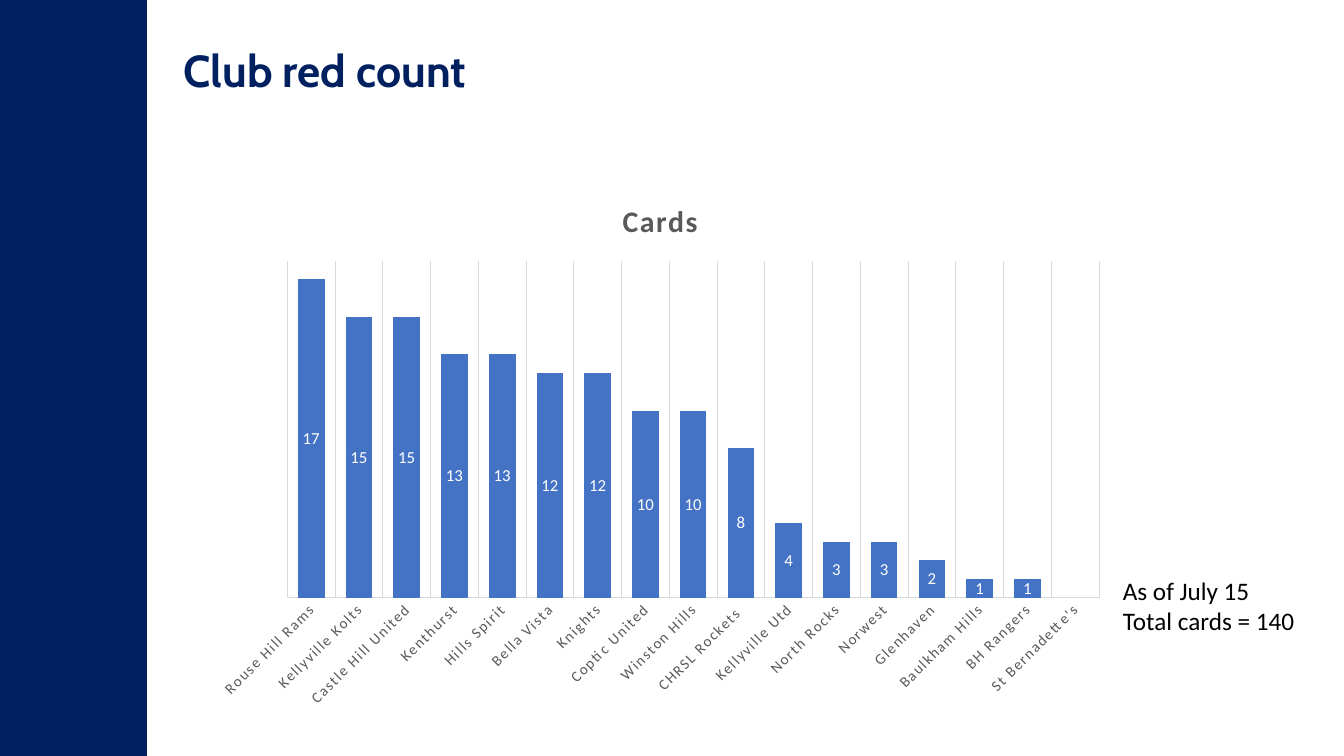
from lxml import etree
from pptx import Presentation
from pptx.chart.data import CategoryChartData
from pptx.dml.color import RGBColor
from pptx.enum.chart import XL_CHART_TYPE as ChartType
from pptx.enum.chart import XL_LABEL_POSITION as LabelPos
from pptx.enum.chart import XL_TICK_MARK as TickMark
from pptx.enum.shapes import MSO_SHAPE as Shape
from pptx.enum.text import MSO_ANCHOR as Anchor
from pptx.enum.text import PP_ALIGN as Align
from pptx.oxml.ns import qn
from pptx.util import Pt

NAVY, BLUE, GREY, LIGHT = "002060", "4472C4", "595959", "D9D9D9"
CARDS = {
    "Rouse Hill Rams": 17, "Kellyville Kolts": 15, "Castle Hill United": 15,
    "Kenthurst": 13, "Hills Spirit": 13, "Bella Vista": 12, "Knights": 12,
    "Coptic United": 10, "Winston Hills": 10, "CHRSL Rockets ": 8,
    "Kellyville Utd": 4, "North Rocks": 3, "Norwest": 3, "Glenhaven": 2,
    "Baulkham Hills": 1, "BH Rangers": 1, "St Bernadette's": None,
}


def rgb(code):
    return RGBColor.from_string(code)


def style_font(font, size, color, name="Calibri", bold=False, spacing=None):
    font.size, font.name, font.bold = Pt(size), name, bold
    font.color.rgb = rgb(color)
    if spacing:
        font._element.set("spc", str(spacing))


def place(s, x, y, w, h):
    s.left, s.top, s.width, s.height = Pt(x), Pt(y), Pt(w), Pt(h)


def write(tf, text, anchor=Anchor.TOP, **fmt):
    """Fill a text frame, one paragraph per line of text."""
    tf.word_wrap = True
    tf.vertical_anchor = anchor
    tf.text = text
    for p in tf.paragraphs:
        p.alignment = Align.LEFT
        for r in p.runs:
            style_font(r.font, **fmt)


def add_bar(slide, x, y, w, h, color):
    s = slide.shapes.add_shape(Shape.RECTANGLE, Pt(x), Pt(y), Pt(w), Pt(h))
    s.shadow.inherit = False
    s.fill.solid()
    s.fill.fore_color.rgb = rgb(color)
    s.line.fill.background()


def set_layout(parent, index, **values):
    """Give a chart part a manual layout, in fractions of the chart."""
    for old in parent.findall(qn("c:layout")):
        parent.remove(old)
    layout = etree.Element(qn("c:layout"))
    manual = etree.SubElement(layout, qn("c:manualLayout"))
    for tag, value in values.items():
        etree.SubElement(manual, qn(f"c:{tag}")).set("val", str(value))
    parent.insert(index, layout)


def style_line(line):
    line.color.rgb = rgb(LIGHT)
    line.width = Pt(0.75)


def style_axes(chart):
    axis = chart.category_axis
    axis.major_tick_mark = axis.minor_tick_mark = TickMark.NONE
    axis.has_major_gridlines = True
    style_line(axis.major_gridlines.format.line)
    style_line(axis.format.line)
    style_font(axis.tick_labels.font, 10.64, GREY, spacing=120)
    body = axis._element.find(qn("c:txPr")).find(qn("a:bodyPr"))
    body.set("rot", "-2700000")

    values = chart.value_axis
    values.minimum_scale, values.maximum_scale = 0, 18
    values.has_major_gridlines = False
    values.visible = False


def add_cards_chart(slide, x, y, w, h):
    data = CategoryChartData()
    data.categories = CARDS.keys()
    data.add_series("Series 1", CARDS.values())
    frame = slide.shapes.add_chart(
        ChartType.COLUMN_STACKED, Pt(x), Pt(y), Pt(w), Pt(h), data)
    chart = frame.chart
    style_font(chart.font, 10, "000000")
    chart.has_legend = False
    style_axes(chart)

    chart.has_title = True
    title = chart.chart_title
    title.include_in_layout = False
    r = title.text_frame.paragraphs[0].add_run()
    r.text = "Cards"
    style_font(r.font, 21.3, GREY, bold=True, spacing=120)
    set_layout(title._element, 1, xMode="edge", yMode="edge", x=0.454, y=0.03)

    plot = chart.plots[0]
    plot.gap_width, plot.overlap, plot.vary_by_categories = 79, 100, False
    set_layout(plot._element.getparent(), 0, layoutTarget="inner", xMode="edge",
               yMode="edge", x=0.093, y=0.151, w=0.888, h=0.626)
    series = plot.series[0]
    series.format.fill.solid()
    series.format.fill.fore_color.rgb = rgb(BLUE)
    labels = series.data_labels
    labels.show_value = True
    labels.position = LabelPos.CENTER
    style_font(labels.font, 12, "FFFFFF")


def main():
    prs = Presentation()
    prs.slide_width, prs.slide_height = Pt(960), Pt(540)
    slide = prs.slides.add_slide(prs.slide_layouts[5])
    add_bar(slide, 0, 0, 105, 540, NAVY)

    title = slide.shapes.title
    place(title, 124, 27, 716, 46)
    write(title.text_frame, "Club red count", Anchor.MIDDLE,
          size=32, color=NAVY, name="Cabin", bold=True)

    add_cards_chart(slide, 144.5, 128, 653, 385)

    note = slide.shapes.add_textbox(Pt(795), Pt(407.5), Pt(161), Pt(51))
    write(note.text_frame, "As of July 15\nTotal cards = 140",
          size=18, color="000000")
    prs.save("out.pptx")


if __name__ == "__main__":
    main()
